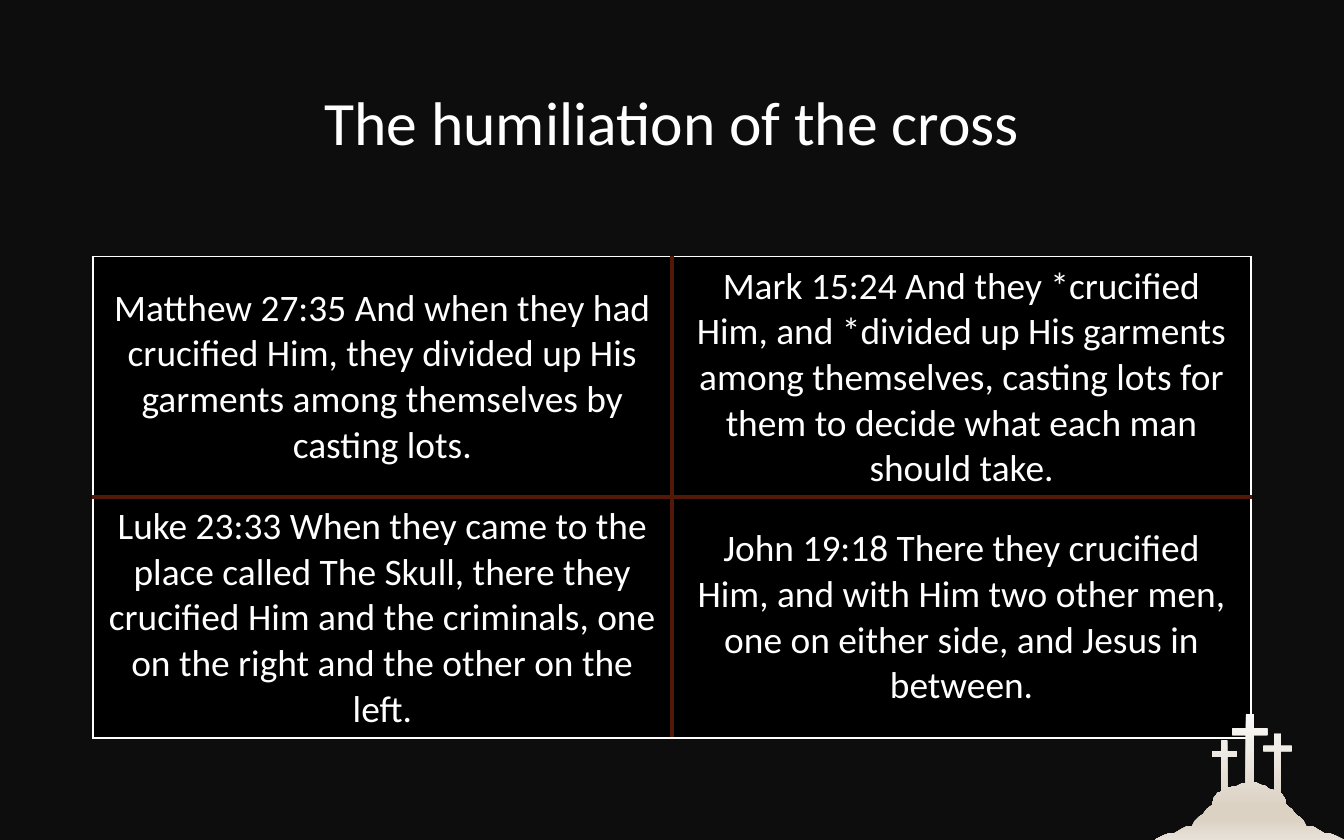
from lxml.etree import SubElement
from pptx import Presentation
from pptx.dml.color import RGBColor
from pptx.enum.text import MSO_ANCHOR as Anchor, PP_ALIGN as Align
from pptx.oxml.ns import qn
from pptx.util import Inches, Pt

COLORS = {
    "background": "0D0D0D",
    "cell": "000000",
    "text": "FFFFFF",
    "frame": "FFFFFF",
    "divider": "521808",
}
FONT = "Calibri"
LEFT, WIDTH = 0.69, 8.62
ROW_HEIGHT = 1.79

VERSES = [
    [
        "Matthew 27:35 And when they had crucified Him, they divided up "
        "His garments among themselves by casting lots.",
        "Mark 15:24 And they *crucified Him, and *divided up His garments "
        "among themselves, casting lots for them to decide what each man "
        "should take.",
    ],
    [
        "Luke 23:33 When they came to the place called The Skull, there they "
        "crucified Him and the criminals, one on the right and the other on "
        "the left.",
        "John 19:18 There they crucified Him, and with Him two other men, "
        "one on either side, and Jesus in between.",
    ],
]

# Hill contour, from left to right, in the gaps between the crosses
LEFT_SLOPE = [
    (8.59, 6.25), (8.65, 6.22), (8.70, 6.20), (8.74, 6.20), (8.79, 6.17),
    (8.83, 6.15), (8.87, 6.15), (8.89, 6.11), (8.92, 6.08), (8.95, 6.06),
    (8.98, 6.02), (9.02, 5.99), (9.03, 5.94), (9.06, 5.90),
]
LEFT_SADDLE = [(9.14, 5.86), (9.20, 5.85), (9.24, 5.83)]
RIGHT_SADDLE = [(9.34, 5.82), (9.38, 5.84), (9.42, 5.85), (9.44, 5.87)]
RIGHT_SLOPE = [
    (9.56, 5.94), (9.57, 5.99), (9.61, 6.02), (9.64, 6.06), (9.67, 6.08),
    (9.70, 6.11), (9.72, 6.15), (9.77, 6.15), (9.82, 6.18), (9.85, 6.20),
    (9.89, 6.20), (9.94, 6.22), (10, 6.25),
]
HILL_GRADIENT = [(0, "FBFAF9"), (74, "DCD2C4"), (83, "DCD2C4"), (100, "E8E1D8")]


def color(name):
    return RGBColor.from_string(COLORS[name])


def write_text(frame, text, *, size, line_spacing=None):
    frame.word_wrap = True
    paragraph = frame.paragraphs[0]
    paragraph.alignment = Align.CENTER
    if line_spacing:
        paragraph.line_spacing = line_spacing
    run = paragraph.add_run()
    run.text = text
    run.font.name = FONT
    run.font.size = Pt(size)
    run.font.color.rgb = color("text")


def add_title(slide, text):
    box = slide.shapes.add_textbox(
        Inches(LEFT), Inches(0.33), Inches(WIDTH), Inches(1.21))
    box.text_frame.vertical_anchor = Anchor.MIDDLE
    write_text(box.text_frame, text, size=33, line_spacing=0.9)


def set_border(cell, side, color_name, width):
    properties = cell._tc.get_or_add_tcPr()
    line = SubElement(properties, qn(f"a:ln{side}"), w=str(Pt(width)))
    fill = SubElement(line, qn("a:solidFill"))
    SubElement(fill, qn("a:srgbClr"), val=COLORS[color_name])


def add_verse_table(slide, verses):
    rows, columns = len(verses), len(verses[0])
    table = slide.shapes.add_table(
        rows, columns, Inches(LEFT), Inches(1.91),
        Inches(WIDTH), Inches(rows * ROW_HEIGHT)).table
    table.first_row = table.horz_banding = False
    for i, row in enumerate(verses):
        for j, verse in enumerate(row):
            cell = table.cell(i, j)
            on_frame = {"L": j == 0, "R": j == columns - 1,
                        "T": i == 0, "B": i == rows - 1}
            for side, is_outer in on_frame.items():
                style = ("frame", 1) if is_outer else ("divider", 2.25)
                set_border(cell, side, *style)
            cell.fill.solid()
            cell.fill.fore_color.rgb = color("cell")
            cell.vertical_anchor = Anchor.MIDDLE
            write_text(cell.text_frame, verse, size=20)


def cross_outline(post, arm, top, beam, feet):
    """Points of a cross from its left foot, over the top, to its right foot."""
    (post_left, post_right), (arm_left, arm_right) = post, arm
    beam_top, beam_bottom = beam
    return [
        (post_left, feet[0]), (post_left, beam_bottom),
        (arm_left, beam_bottom), (arm_left, beam_top),
        (post_left, beam_top), (post_left, top),
        (post_right, top), (post_right, beam_top),
        (arm_right, beam_top), (arm_right, beam_bottom),
        (post_right, beam_bottom), (post_right, feet[1]),
    ]


def fill_gradient(shape, stops):
    """Fill from top to bottom with (percent, colour) stops."""
    shape.fill.gradient()
    shape.fill.gradient_angle = 270
    stop_list = shape._element.spPr.find(".//" + qn("a:gsLst"))
    stop_list.clear()
    for percent, value in stops:
        stop = SubElement(stop_list, qn("a:gs"), pos=str(percent * 1000))
        SubElement(stop, qn("a:srgbClr"), val=value)


def add_hill_with_crosses(slide):
    outline = [
        *LEFT_SLOPE,
        *cross_outline((9.09, 9.13), (9.02, 9.20), 5.51, (5.59, 5.63), (5.89, 5.87)),
        *LEFT_SADDLE,
        *cross_outline((9.27, 9.33), (9.17, 9.43), 5.31, (5.42, 5.47), (5.83, 5.82)),
        *RIGHT_SADDLE,
        *cross_outline((9.48, 9.53), (9.40, 9.61), 5.46, (5.55, 5.59), (5.88, 5.90)),
        *RIGHT_SLOPE,
    ]
    points = [(Inches(x), Inches(y)) for x, y in outline]
    builder = slide.shapes.build_freeform(*points[0])
    builder.add_line_segments(points[1:], close=True)
    hill = builder.convert_to_shape()
    hill.shadow.inherit = False
    hill.line.fill.background()
    fill_gradient(hill, HILL_GRADIENT)


def main():
    presentation = Presentation()
    presentation.slide_width = Inches(10)
    presentation.slide_height = Inches(6.25)
    slide = presentation.slides.add_slide(presentation.slide_layouts[6])
    slide.background.fill.solid()
    slide.background.fill.fore_color.rgb = color("background")
    add_title(slide, "The humiliation of the cross")
    add_verse_table(slide, VERSES)
    add_hill_with_crosses(slide)
    presentation.save("out.pptx")


if __name__ == "__main__":
    main()
